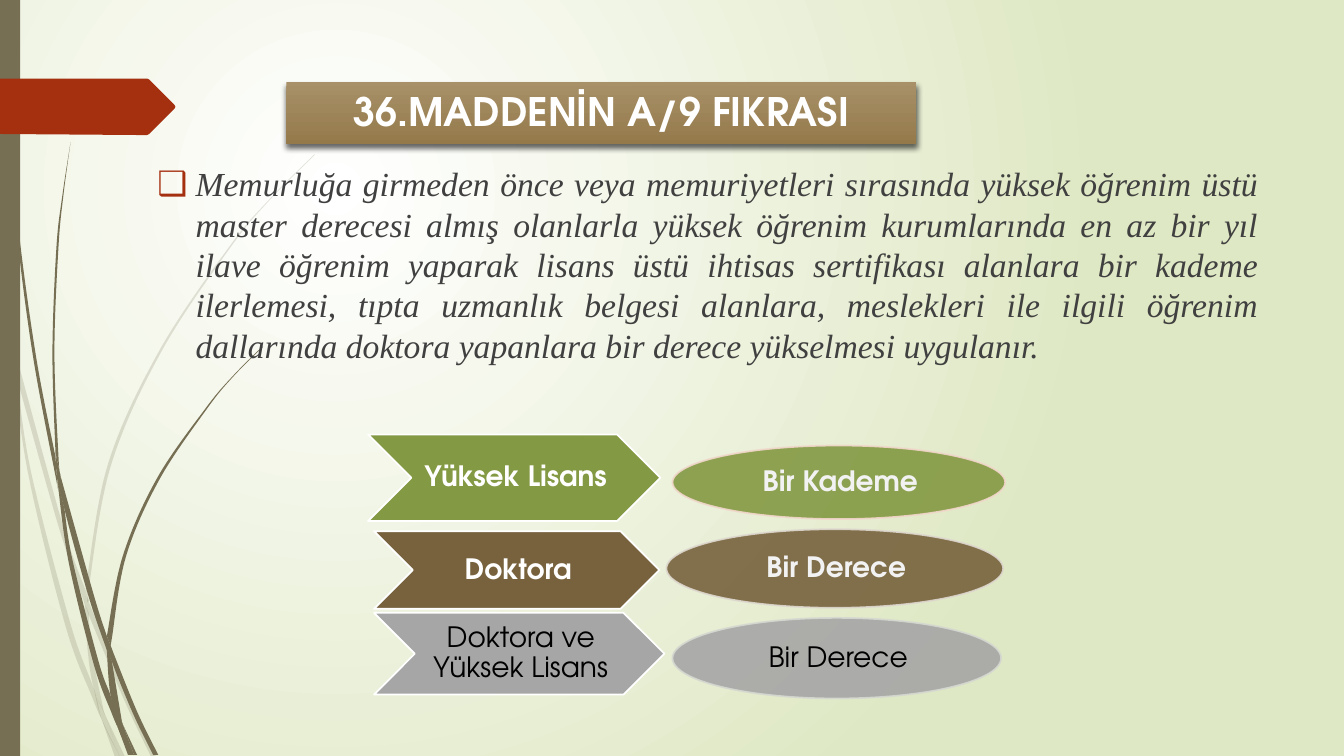
from dataclasses import dataclass
from typing import NamedTuple

from lxml import etree
from pptx import Presentation
from pptx.dml.color import RGBColor
from pptx.enum.shapes import MSO_SHAPE
from pptx.enum.text import MSO_ANCHOR, MSO_AUTO_SIZE, PP_ALIGN
from pptx.oxml.ns import qn
from pptx.util import Inches, Pt

CHEVRON = MSO_SHAPE.CHEVRON
OVAL = MSO_SHAPE.FLOWCHART_CONNECTOR
RECTANGLE = MSO_SHAPE.RECTANGLE
CENTER, JUSTIFY = PP_ALIGN.CENTER, PP_ALIGN.JUSTIFY
TOP, MIDDLE = MSO_ANCHOR.TOP, MSO_ANCHOR.MIDDLE
NO_AUTOFIT = MSO_AUTO_SIZE.NONE


@dataclass(frozen=True)
class Theme:
    heading_font: str = "TeX Gyre Adventor"
    body_font: str = "Times New Roman"
    title_size: int = 28
    body_size: int = 24
    label_size: int = 20
    white: str = "FFFFFF"
    black: str = "000000"
    pale: str = "F2F2F2"
    text: str = "404040"
    background_edge: str = "DFE8C4"
    stem: str = "766F54"
    accent: str = "A53010"
    title_top: str = "A89068"
    title_bottom: str = "947A4B"
    green: str = "839943"
    brown: str = "77623D"
    gray: str = "A6A6A6"


THEME = Theme()
Point = tuple[float, float]


class Box(NamedTuple):
    left: float
    top: float
    width: float
    height: float


class Blade(NamedTuple):
    first_edge: list[Point]
    second_edge: list[Point]


class Step(NamedTuple):
    degree: str
    reward: str
    color: str
    oval_line: str
    degree_color: str
    reward_color: str
    bold: bool
    chevron: Box
    oval: Box


FAINT_BLADES = [
    Blade([(.11, 3.5), (.09, 3.22), (0, 2.82)], [(0, 2.99), (.1, 3.44)]),
    Blade([(.17, 3.76), (.58, 5.22), (.84, 5.99)], [(.85, 5.86), (.62, 5.2), (.14, 3.45)]),
    Blade([(.88, 6.1), (1.23, 6.94), (1.5, 7.51)], [(1.55, 7.51), (1.27, 6.92), (.92, 6.07), (.88, 5.96)]),
    Blade([(1.05, 7.11), (1.19, 7.51)], [(1.24, 7.51)]),
    Blade([(.11, 3.5), (.28, 4.7), (.65, 6.21), (.92, 6.93), (1.01, 7.14)],
          [(.99, 7.07), (.93, 6.83), (.7, 6.19), (.31, 4.69), (.17, 3.76)]),
    Blade([(.84, 5.99), (.87, 6.46), (.93, 6.83), (1.05, 7.11)], [(1.03, 7.06), (.91, 6.46), (.88, 6.08)]),
    Blade([(.88, 5.96), (.88, 5.84), (1.1, 4.62), (1.6, 3.49), (2.29, 2.45), (2.68, 1.98), (3.12, 1.54)],
          [(3.12, 1.53), (2.68, 1.97), (2.28, 2.44), (1.58, 3.48), (1.07, 4.61), (.85, 5.84)]),
    Blade([(1.01, 7.14), (1.14, 7.51)], [(1.19, 7.51)]),
    Blade([(.84, 5.99), (.88, 6.1)], [(.88, 5.96), (.85, 5.86)]),
    Blade([(.93, 6.83), (1.01, 7.14), (1.19, 7.51)], [(1.19, 7.51), (1.05, 7.11), (.96, 6.92)]),
]
STRONG_BLADES = [
    Blade([(.03, 0), (.07, 1.1), (.17, 2.33), (.33, 3.55), (.56, 4.77), (.57, 4.81)],
          [(.55, 4.53), (.36, 3.55), (.19, 2.32), (.08, 1.09), (.04, 0)]),
    Blade([(.6, 4.72), (.64, 5.05), (.88, 5.92), (1.06, 6.45)], [(1.06, 6.31), (.93, 5.9), (.6, 4.72)]),
    Blade([(1.1, 6.41), (1.11, 6.56), (1.32, 7.08), (1.52, 7.49)], [(1.57, 7.49), (1.36, 7.06), (1.13, 6.49)]),
    Blade([(.57, 4.77), (.68, 5.57), (.93, 6.59), (1.11, 7.08), (1.17, 7.22)],
          [(1.16, 7.17), (1.1, 6.91), (.98, 6.57), (.72, 5.56), (.64, 5.05)]),
    Blade([(.6, 4.72), (.58, 4.53), (.54, 3.49), (.58, 2.45), (.63, 1.93), (.7, 1.41)],
          [(.7, 1.41), (.62, 1.93), (.56, 2.45), (.52, 3.49), (.55, 4.49)]),
    Blade([(1.22, 7.19), (1.33, 7.49)], [(1.36, 7.49)]),
    Blade([(.55, 4.49), (.57, 4.77), (.64, 5.05)], [(.6, 4.72)]),
    Blade([(1.1, 6.41), (1.11, 6.33), (1.25, 5.52), (1.58, 4.76), (2.05, 4.06), (2.31, 3.74), (2.61, 3.44)],
          [(2.6, 3.44), (2.31, 3.73), (2.04, 4.05), (1.56, 4.74), (1.22, 5.51), (1.06, 6.31)]),
    Blade([(1.17, 7.22), (1.27, 7.49)], [(1.31, 7.49)]),
    Blade([(1.06, 6.45), (1.1, 6.91), (1.22, 7.19)], [(1.21, 7.16), (1.11, 6.56)]),
    Blade([(1.06, 6.31), (1.06, 6.45), (1.11, 6.56)], [(1.1, 6.41)]),
    Blade([(1.1, 6.91), (1.17, 7.22), (1.3, 7.49)], [(1.33, 7.49), (1.22, 7.19)]),
]
TAG_OUTLINE = [(0, .78), (1.46, .78), (1.48, .79), (1.73, 1.04), (1.74, 1.06),
               (1.73, 1.08), (1.48, 1.33), (1.46, 1.34), (1.36, 1.34), (0, 1.33)]
STEPS = [
    Step("Yüksek Lisans", "Bir Kademe", THEME.green, "F2D8CC", THEME.white, THEME.pale, True,
         Box(3.65, 4.31, 2.9, .86), Box(6.67, 4.42, 3.3, .73)),
    Step("Doktora", "Bir Derece", THEME.brown, "DFD9D0", THEME.white, THEME.pale, True,
         Box(3.71, 5.27, 2.83, .77), Box(6.61, 5.25, 3.34, .78)),
    Step("Doktora ve Yüksek Lisans", "Bir Derece", THEME.gray, "D5D9D1", THEME.black, THEME.black, False,
         Box(3.71, 6.08, 2.88, .81), Box(6.67, 6.13, 3.26, .8)),
]
BODY_TEXT = (
    "Memurluğa girmeden önce veya memuriyetleri sırasında yüksek öğrenim üstü master derecesi "
    "almış olanlarla yüksek öğrenim kurumlarında en az bir yıl ilave öğrenim yaparak lisans üstü "
    "ihtisas sertifikası alanlara bir kademe ilerlemesi, tıpta uzmanlık belgesi alanlara, meslekleri "
    "ile ilgili öğrenim dallarında doktora yapanlara bir derece yükselmesi uygulanır."
)


def add_child(parent, tag: str, **attributes):
    return etree.SubElement(parent, qn(tag), {key: str(value) for key, value in attributes.items()})


def set_alpha(fill_parent, percent: int) -> None:
    add_child(fill_parent.find(qn("a:solidFill"))[0], "a:alpha", val=percent * 1000)


def paint(shape, color: str, alpha: int = 100, line: str = "") -> None:
    shape.shadow.inherit = False
    shape.fill.solid()
    shape.fill.fore_color.rgb = RGBColor.from_string(color)
    if line:
        shape.line.color.rgb = RGBColor.from_string(line)
        shape.line.width = Pt(1.25)
    else:
        shape.line.fill.background()
    if alpha < 100:
        set_alpha(shape.element.spPr, alpha)
        if line:
            set_alpha(shape.element.spPr.find(qn("a:ln")), alpha)


def set_gradient(fill, first: str, last: str) -> None:
    fill.gradient()
    for position, (stop, color) in enumerate(zip(fill.gradient_stops, (first, last))):
        stop.color.rgb = RGBColor.from_string(color)
        stop.position = position


def place(shape, box: Box) -> None:
    shape.left, shape.top, shape.width, shape.height = map(Inches, box)


def write(shape, text: str, *, font: str, size: int, color: str, bold: bool = False, italic: bool = False,
          align=CENTER, anchor=MIDDLE, margins: Box = Box(.1, .05, .1, .05), spacing: float = 1):
    frame = shape.text_frame
    frame.word_wrap, frame.auto_size, frame.vertical_anchor = True, NO_AUTOFIT, anchor
    frame.margin_left, frame.margin_top, frame.margin_right, frame.margin_bottom = map(Inches, margins)
    paragraph = frame.paragraphs[0]
    paragraph.alignment, paragraph.line_spacing = align, spacing
    run = paragraph.add_run()
    run.text = text
    run.font.name, run.font.size, run.font.bold, run.font.italic = font, Pt(size), bold, italic
    run.font.color.rgb = RGBColor.from_string(color)
    return paragraph


def add_outline(slide, points: list[Point], color: str, alpha: int = 100):
    start, *rest = [(Inches(x), Inches(y)) for x, y in points]
    builder = slide.shapes.build_freeform(*start)
    builder.add_line_segments(rest, close=True)
    shape = builder.convert_to_shape()
    paint(shape, color, alpha)
    return shape


def bend(shape, lines: list, edge: list[Point]) -> None:
    padded = [edge[0], *edge, edge[-1]]
    for line, before, start, end, after in zip(lines, padded, padded[1:], padded[2:], padded[3:]):
        controls = ([s + (e - b) / 6 for b, s, e in zip(before, start, end)],
                    [e - (a - s) / 6 for s, e, a in zip(start, end, after)], end)
        line.tag = qn("a:cubicBezTo")
        line.remove(line[0])
        for x, y in controls:
            add_child(line, "a:pt", x=Inches(x) - shape.left, y=Inches(y) - shape.top)


def add_blade(slide, blade: Blade, alpha: int) -> None:
    shape = add_outline(slide, blade.first_edge + blade.second_edge, THEME.stem, alpha)
    lines = list(shape.element.iter(qn("a:lnTo")))
    turn = len(blade.first_edge)
    bend(shape, lines[:turn - 1], blade.first_edge)
    bend(shape, lines[turn:], blade.second_edge)


def add_decoration(slide) -> None:
    for blades, alpha in ((FAINT_BLADES, 20), (STRONG_BLADES, 100)):
        for blade in blades:
            add_blade(slide, blade, alpha)
    paint(slide.shapes.add_shape(RECTANGLE, 0, 0, Inches(.2), Inches(7.5)), THEME.stem)
    add_outline(slide, TAG_OUTLINE, THEME.accent)


def set_background(slide) -> None:
    set_gradient(slide.background.fill, THEME.white, THEME.background_edge)
    gradient = slide.element.find(".//" + qn("a:gradFill"))
    gradient.remove(gradient.find(qn("a:lin")))
    add_child(add_child(gradient, "a:path", path="circle"), "a:fillToRect", l=50000, t=50000, r=100000, b=100000)


def add_title(title) -> None:
    place(title, Box(2.84, .81, 6.25, .62))
    set_gradient(title.fill, THEME.title_top, THEME.title_bottom)
    title.fill.gradient_angle = 270
    shadow = add_child(add_child(title.element.spPr, "a:effectLst"), "a:outerShdw",
                       blurRad=Pt(4), dist=Pt(3), dir=5400000, rotWithShape=0)
    add_child(add_child(shadow, "a:srgbClr", val=THEME.black), "a:alpha", val=60000)
    write(title, "36.MADDENİN A/9 FIKRASI", font=THEME.heading_font, size=THEME.title_size,
          color=THEME.white, bold=True, margins=Box(.1, .03, .1, .07))


def add_body(body) -> None:
    place(body, Box(1.46, 1.57, 11.12, 5.71))
    paragraph = write(body, BODY_TEXT, font=THEME.body_font, size=THEME.body_size, color=THEME.text,
                      italic=True, align=JUSTIFY, anchor=TOP)
    paragraph.space_before = Pt(10)
    properties = paragraph._p.get_or_add_pPr()
    properties.set("marL", str(Inches(.38)))
    properties.set("indent", str(Inches(-.38)))
    add_child(add_child(properties, "a:buClr"), "a:srgbClr", val=THEME.accent)
    add_child(properties, "a:buChar", char="❑")


def add_step(slide, step: Step) -> None:
    for kind, box, text, color, alpha, line in (
            (CHEVRON, step.chevron, step.degree, step.degree_color, 100, THEME.white),
            (OVAL, step.oval, step.reward, step.reward_color, 90, step.oval_line)):
        shape = slide.shapes.add_shape(kind, *map(Inches, box))
        paint(shape, step.color, alpha, line)
        write(shape, text, font=THEME.heading_font, size=THEME.label_size, color=color, bold=step.bold,
              margins=Box(.03, .01, 0, .01), spacing=.9)


def main() -> None:
    presentation = Presentation()
    presentation.slide_width, presentation.slide_height = Inches(13.33), Inches(7.5)
    slide = presentation.slides.add_slide(presentation.slide_layouts[1])
    set_background(slide)
    add_decoration(slide)
    title, body = slide.placeholders
    for placeholder in (title, body):
        placeholder.element.getparent().append(placeholder.element)
    add_title(title)
    add_body(body)
    for step in STEPS:
        add_step(slide, step)
    presentation.save("out.pptx")


if __name__ == "__main__":
    main()
